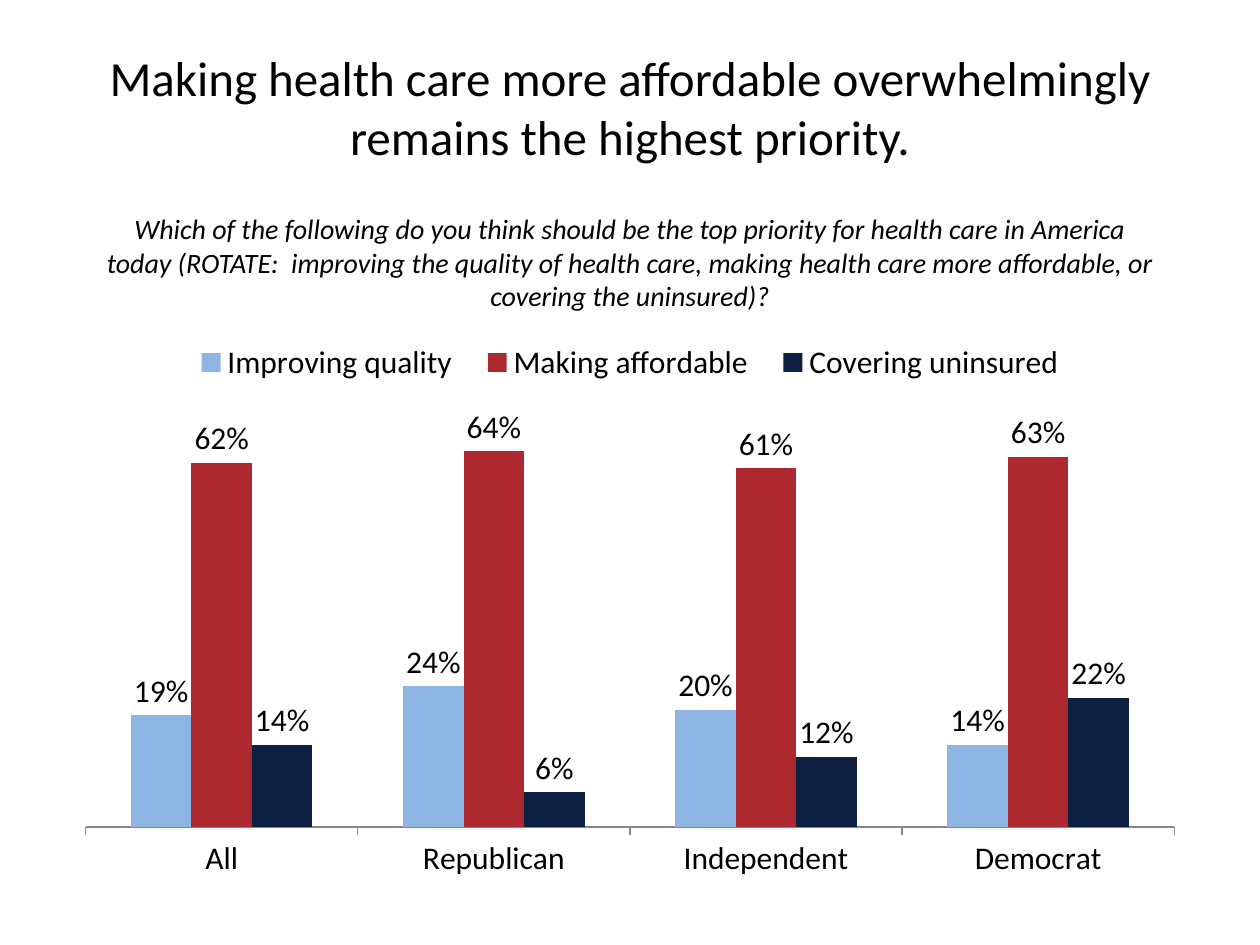
from lxml import etree
from pptx import Presentation
from pptx.chart.data import CategoryChartData
from pptx.dml.color import RGBColor
from pptx.enum.chart import XL_CHART_TYPE, XL_LABEL_POSITION, XL_LEGEND_POSITION, XL_TICK_MARK
from pptx.enum.text import MSO_ANCHOR, MSO_AUTO_SIZE, PP_ALIGN
from pptx.oxml.ns import qn
from pptx.util import Pt

COLORS = {
    "text": "000000",
    "axis": "868686",
    "quality": "8EB4E3",
    "affordable": "AE282F",
    "uninsured": "0D2041",
}
PARTIES = ["All", "Republican", "Independent", "Democrat"]
PRIORITIES = [
    ("Improving quality", "quality", [0.19, 0.24, 0.20, 0.14]),
    ("Making affordable", "affordable", [0.62, 0.64, 0.61, 0.63]),
    ("Covering uninsured", "uninsured", [0.14, 0.06, 0.12, 0.22]),
]
HEADLINE = "Making health care more affordable overwhelmingly remains the highest priority."
QUESTION = (
    "Which of the following do you think should be the top priority for health care "
    "in America today (ROTATE:  improving the quality of health care, making health "
    "care more affordable, or covering the uninsured)?"
)


def set_layout(parent, index, x, y, w, h, inner=False):
    """Place a chart part by fractions of the chart's size."""
    for old in parent.findall(qn("c:layout")):
        parent.remove(old)
    layout = etree.Element(qn("c:layout"))
    manual = etree.SubElement(layout, qn("c:manualLayout"))
    settings = [("layoutTarget", "inner")] if inner else []
    settings += [("xMode", "edge"), ("yMode", "edge"), ("x", x), ("y", y), ("w", w), ("h", h)]
    for tag, value in settings:
        etree.SubElement(manual, qn(f"c:{tag}")).set("val", str(value))
    parent.insert(index, layout)


class SlideBuilder:
    font_name = "Calibri"

    def __init__(self, slide):
        self.slide = slide

    def style_font(self, font, size, italic=False):
        font.name = self.font_name
        font.size = Pt(size)
        font.italic = italic
        font.color.rgb = RGBColor.from_string(COLORS["text"])

    def fill_text(self, frame, text, size, italic=False):
        frame.word_wrap = True
        frame.text = text
        paragraph = frame.paragraphs[0]
        paragraph.alignment = PP_ALIGN.CENTER
        self.style_font(paragraph.runs[0].font, size, italic)

    def title(self, text, left, top, width, height):
        headline = self.slide.shapes.title
        headline.left, headline.top = Pt(left), Pt(top)
        headline.width, headline.height = Pt(width), Pt(height)
        self.fill_text(headline.text_frame, text, 28)
        headline.text_frame.vertical_anchor = MSO_ANCHOR.MIDDLE

    def question(self, text, left, top, width, height):
        box = self.slide.shapes.add_textbox(Pt(left), Pt(top), Pt(width), Pt(height))
        self.fill_text(box.text_frame, text, 16, italic=True)
        box.text_frame.auto_size = MSO_AUTO_SIZE.SHAPE_TO_FIT_TEXT

    def column_chart(self, categories, series_rows, left, top, width, height):
        data = CategoryChartData(number_format="0%")
        data.categories = categories
        for name, _, shares in series_rows:
            data.add_series(name, shares)
        chart = self.slide.shapes.add_chart(
            XL_CHART_TYPE.COLUMN_CLUSTERED, Pt(left), Pt(top), Pt(width), Pt(height), data
        ).chart
        chart.has_title = False
        self.style_font(chart.font, 18)

        plot = chart.plots[0]
        plot.gap_width = 150
        plot.overlap = 0
        plot.vary_by_categories = False
        for series, (_, color, _) in zip(plot.series, series_rows):
            series.format.fill.solid()
            series.format.fill.fore_color.rgb = RGBColor.from_string(COLORS[color])
            labels = series.data_labels
            labels.show_value = True
            labels.number_format = "0%"
            labels.number_format_is_linked = False
            labels.position = XL_LABEL_POSITION.OUTSIDE_END

        shares_axis = chart.value_axis
        shares_axis.minimum_scale, shares_axis.maximum_scale = 0, 0.7
        shares_axis.has_major_gridlines = False
        shares_axis.visible = False
        party_axis = chart.category_axis
        party_axis.major_tick_mark = XL_TICK_MARK.OUTSIDE
        party_axis.format.line.color.rgb = RGBColor.from_string(COLORS["axis"])
        party_axis.format.line.width = Pt(0.75)

        chart.has_legend = True
        chart.legend.position = XL_LEGEND_POSITION.TOP
        chart.legend.include_in_layout = False
        chart_xml = chart.element
        set_layout(chart_xml.find(".//" + qn("c:legend")), 1, 0.1, 0.1, 0.8, 0.09)
        set_layout(chart_xml.find(".//" + qn("c:plotArea")), 0, 0.02, 0.23, 0.96, 0.66, inner=True)


def main():
    presentation = Presentation()
    presentation.slide_width, presentation.slide_height = Pt(720), Pt(540)
    title_only = presentation.slide_layouts[5]
    builder = SlideBuilder(presentation.slides.add_slide(title_only))
    builder.title(HEADLINE, 36, 10.8, 648, 100)
    builder.question(QUESTION, 54, 117.4, 612, 65.5)
    builder.column_chart(PARTIES, PRIORITIES, 36, 155.5, 648, 356.4)
    presentation.save("out.pptx")


if __name__ == "__main__":
    main()
